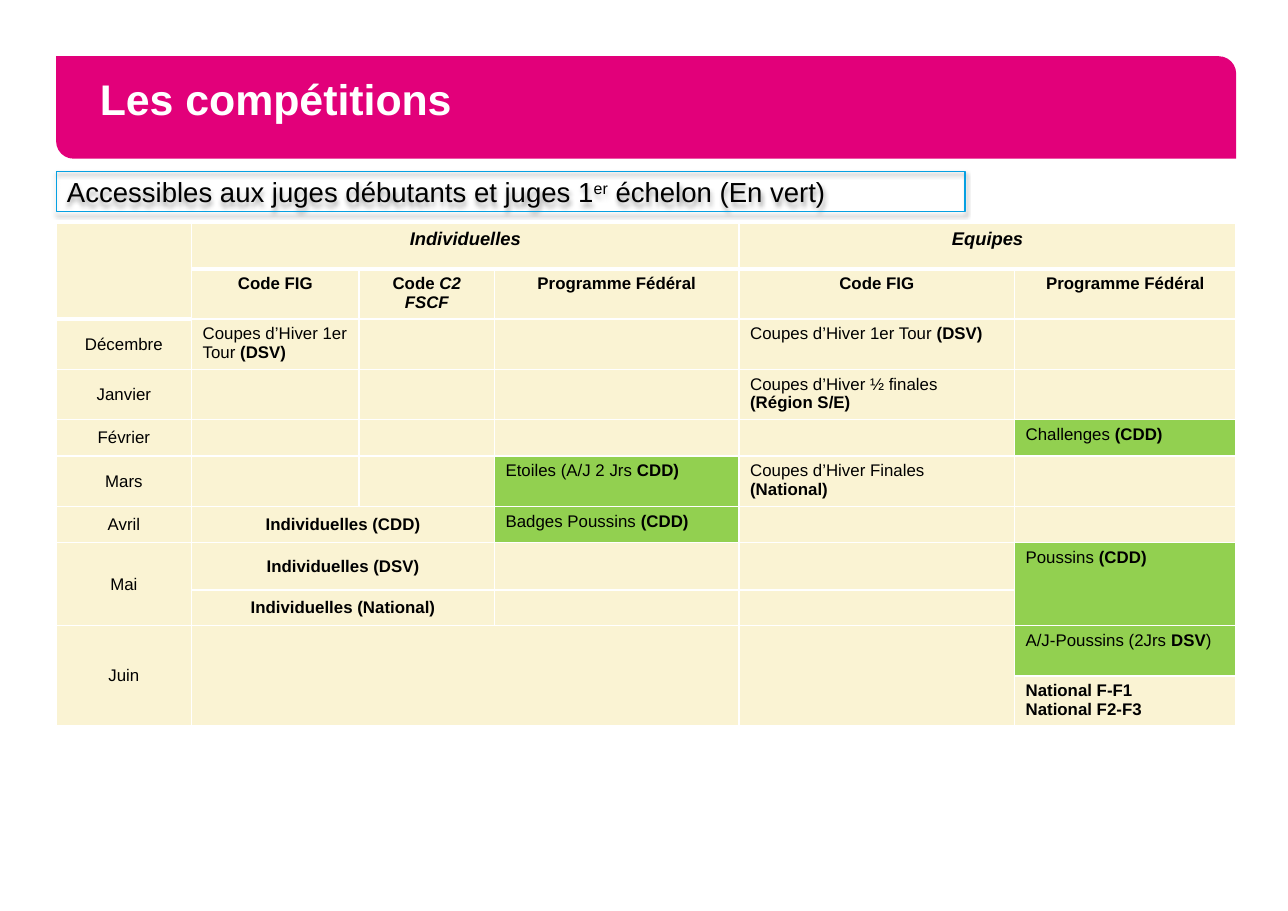
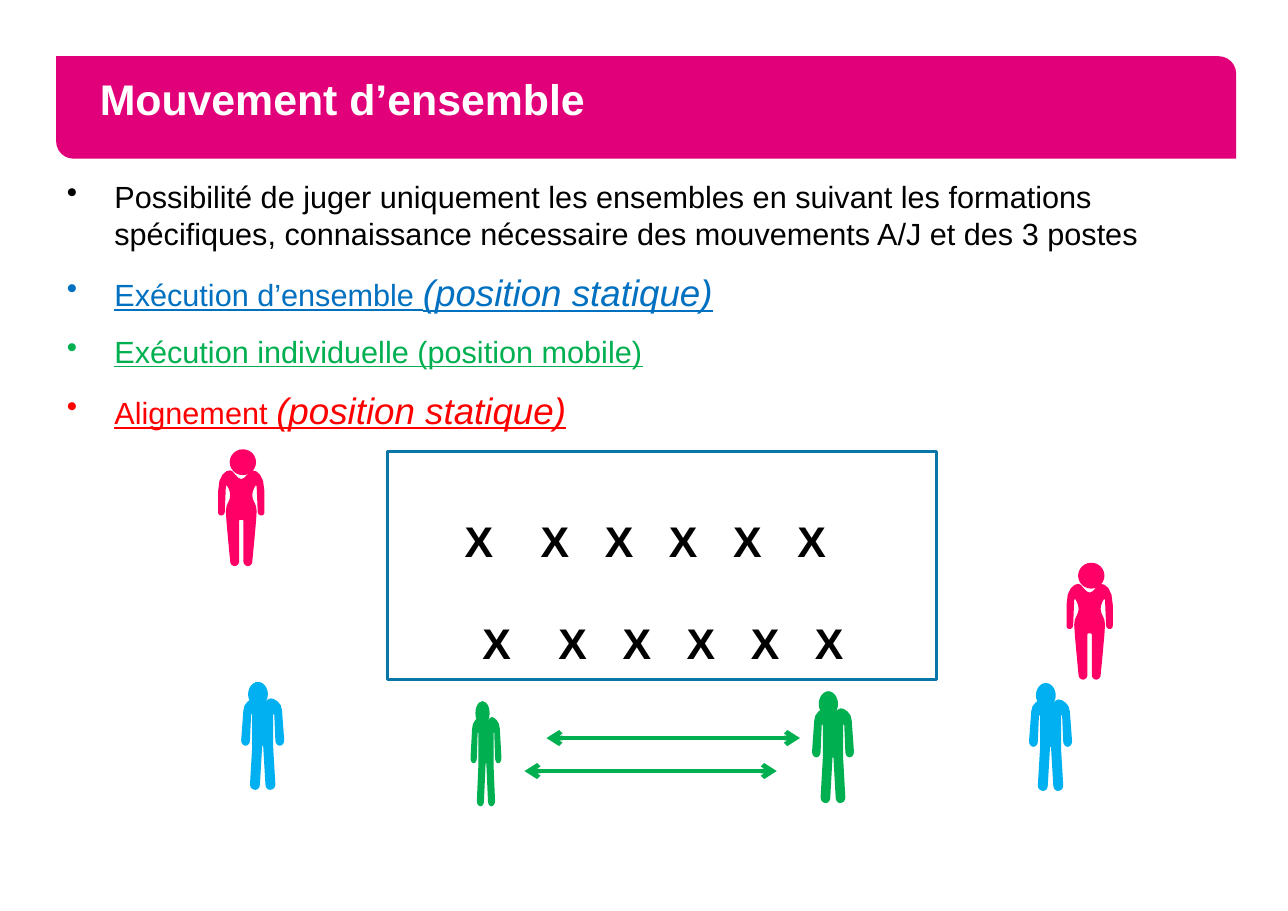
"""Build two slides on gymnastics judging: the competition calendar and the group routine."""
import dataclasses
import typing

import lxml.etree
import pptx
import pptx.dml.color
import pptx.enum.shapes
import pptx.enum.text
import pptx.oxml.ns
import pptx.util

SLIDE_WIDTH = pptx.util.Inches(11.69)
SLIDE_HEIGHT = pptx.util.Inches(8.27)
FONT = "Arial"
COLORS = {
    "band": "E2007A", "white": "FFFFFF", "black": "000000", "cream": "FAF3D3",
    "open": "92D050", "frame": "06A0E2", "floor": "0877A7", "blue": "0070C0",
    "green": "00B050", "red": "FF0000", "pink": "FF0066", "sky": "00B0F0",
}
LEFT, FULL_WIDTH = 4.36, 91.62
COLUMNS = (10.52, 13, 10.52, 18.99, 21.39, 17.2)
ROWS = (4.96, 5.52, 5.52, 5.52, 4, 5.52, 4, 5.2, 3.9, 5.52, 5.52)
CENTER = pptx.enum.text.PP_ALIGN.CENTER
MIDDLE = pptx.enum.text.MSO_ANCHOR.MIDDLE
SHAPES = pptx.enum.shapes.MSO_SHAPE
Points = tuple[tuple[float, float], ...]


class Area(typing.NamedTuple):
    """Rectangle in percent of the slide's size."""
    left: float
    top: float
    width: float
    height: float

    def emu(self) -> tuple[int, int, int, int]:
        """Return the rectangle in slide units."""
        return across(self.left), down(self.top), across(self.width), down(self.height)


@dataclasses.dataclass(frozen=True)
class Run:
    """Piece of text with its formatting."""
    text: str
    bold: bool = False
    italic: bool = False
    underline: bool = False
    size: float = 11
    color: str = "black"
    baseline: int = 0


@dataclasses.dataclass(frozen=True)
class Entry:
    """Filled or merged cell of the calendar."""
    row: int
    column: int
    lines: tuple[tuple[Run, ...], ...] = ()
    rows: int = 1
    columns: int = 1
    fill: str = "cream"
    centered: bool = False
    middle: bool = False


@dataclasses.dataclass(frozen=True)
class Outline:
    """Left half of a body on its own grid, with the head as shares of the body."""
    width: float
    height: float
    segments: tuple[Points, ...]
    head: Area


@dataclasses.dataclass(frozen=True)
class Judge:
    """Judge standing beside the floor."""
    outline: Outline
    color: str
    area: Area


WOMAN = Outline(42, 87, (
    ((21, 8),), ((17, 8), (14, 0), (11, 0)), ((7, 0), (0, 4), (0, 19)), ((0, 38),),
    ((0, 40), (1, 41), (3, 41)), ((4, 41), (6, 40), (6, 38)), ((7, 15),),
    ((7, 14), (7, 14), (8, 14)), ((8, 14), (11, 18), (11, 23)),
    ((11, 28), (7, 30), (7, 37)), ((7, 43), (11, 83), (11, 83)),
    ((11, 85), (13, 87), (15, 87)), ((17, 87), (19, 85), (19, 83)), ((19, 46),),
    ((19, 45), (20, 45), (21, 45)),
), Area(0.25, -0.22, 0.57, 0.27))
MAN = Outline(39, 83, (
    ((19.5, 4),), ((17, 4), (15, 0), (12, 0)), ((9, 0), (2, 4), (2, 11)), ((0, 38),),
    ((0, 41), (2, 43), (4, 43)), ((6, 43), (8, 41), (8, 38)), ((9, 15),),
    ((9, 14), (10, 14), (10, 15)), ((10, 44),), ((8, 78),),
    ((8, 81), (10, 83), (13, 83)), ((15, 83), (17, 81), (17, 78)), ((19, 44),),
    ((19, 43), (19, 43), (19.5, 43)),
), Area(0.16, -0.18, 0.46, 0.27))
JUDGES = (
    Judge(WOMAN, "pink", Area(16.94, 51.63, 3.59, 10.52)),
    Judge(WOMAN, "pink", Area(82.81, 64.09, 3.59, 10.52)),
    Judge(MAN, "sky", Area(79.9, 76.78, 3.34, 10.04)),
    Judge(MAN, "sky", Area(18.73, 76.66, 3.34, 10.04)),
    Judge(MAN, "green", Area(63.05, 77.75, 3.25, 10.4)),
    Judge(MAN, "green", Area(36.53, 78.72, 2.4, 9.79)),
)


def across(share: float) -> int:
    """Convert percent of the slide's width."""
    return round(SLIDE_WIDTH * share / 100)


def down(share: float) -> int:
    """Convert percent of the slide's height."""
    return round(SLIDE_HEIGHT * share / 100)


def rgb(name: str) -> pptx.dml.color.RGBColor:
    """Look up a colour."""
    return pptx.dml.color.RGBColor.from_string(COLORS[name])


def add_element(parent, tag: str, **attributes: str):
    """Append a drawing element to its parent."""
    return lxml.etree.SubElement(parent, pptx.oxml.ns.qn(tag), attributes)


def write_runs(paragraph, runs: typing.Iterable[Run]) -> None:
    """Add formatted runs to a paragraph."""
    for item in runs:
        run = paragraph.add_run()
        run.text = item.text
        font = run.font
        font.name, font.size = FONT, pptx.util.Pt(item.size)
        font.bold, font.italic, font.underline = item.bold, item.italic, item.underline
        font.color.rgb = rgb(item.color)
        if item.baseline:
            font._element.set("baseline", str(item.baseline * 1000))


def write_lines(text_frame, lines: typing.Sequence[typing.Sequence[Run]]) -> list:
    """Write one paragraph for each line and return the paragraphs."""
    text_frame.word_wrap = True
    text_frame.text = "\n".join("" for _ in lines)
    for paragraph, runs in zip(text_frame.paragraphs, lines):
        paragraph.alignment = pptx.enum.text.PP_ALIGN.LEFT
        write_runs(paragraph, runs)
    return list(text_frame.paragraphs)


def add_box(slide, kind, area: Area, fill: str = "", line: str = "", weight: float = 0):
    """Add a preset shape without a shadow."""
    shape = slide.shapes.add_shape(kind, *area.emu())
    style_shape(shape, fill, line, weight)
    shape.text_frame.vertical_anchor = MIDDLE
    return shape


def style_shape(shape, fill: str, line: str = "", weight: float = 0) -> None:
    """Set the fill and line of a shape."""
    shape.shadow.inherit = False
    if fill:
        shape.fill.solid()
        shape.fill.fore_color.rgb = rgb(fill)
    else:
        shape.fill.background()
    if line:
        shape.line.color.rgb = rgb(line)
        shape.line.width = pptx.util.Pt(weight)
    else:
        shape.line.fill.background()


def add_titled_slide(presentation, title: str):
    """Add a blank slide with the title band."""
    slide = presentation.slides.add_slide(presentation.slide_layouts[6])
    band = add_box(slide, SHAPES.ROUND_2_DIAG_RECTANGLE, Area(LEFT, 6.17, FULL_WIDTH, 11.25), "band")
    band.adjustments[0], band.adjustments[1] = 0, 0.17
    band.text_frame.margin_left = band.text_frame.margin_right = pptx.util.Inches(0.35)
    line = (Run(title, bold=True, size=28, color="white"),)
    write_lines(band.text_frame, [line])[0].line_spacing = pptx.util.Pt(22)
    return slide


def heading(row: int, column: int, *runs: Run, columns: int = 1) -> Entry:
    """Describe a centred heading."""
    return Entry(row, column, (runs,), columns=columns, centered=True)


def label(row: int, column: int, text: str, bold: bool = False, rows: int = 1, columns: int = 1) -> Entry:
    """Describe a label centred both ways."""
    return Entry(row, column, ((Run(text, bold),),), rows, columns, centered=True, middle=True)


def event(row: int, column: int, plain: str, bold: str, fill: str = "cream", rows: int = 1) -> Entry:
    """Describe an event with its level in bold."""
    return Entry(row, column, ((Run(plain), Run(bold, True)),), rows, fill=fill)


def calendar_entries() -> list[Entry]:
    """List the cells of the calendar that hold text or span others."""
    months = {2: "Décembre", 3: "Janvier", 4: "Février", 5: "Mars", 6: "Avril", 7: "Mai", 9: "Juin"}
    levels = {6: "CDD", 7: "DSV", 8: "National"}
    heads = {1: "Code FIG", 3: "Programme Fédéral", 4: "Code FIG", 5: "Programme Fédéral"}
    return [
        Entry(0, 0, rows=2),
        heading(0, 1, Run("Individuelles", True, True, size=12), columns=3),
        heading(0, 4, Run("Equipes", True, True, size=12), columns=2),
        *(heading(1, column, Run(text, True)) for column, text in heads.items()),
        heading(1, 2, Run("Code ", True), Run("C2 FSCF", True, True)),
        *(label(row, 0, text, rows=2 if row > 6 else 1) for row, text in months.items()),
        *(label(row, 1, f"Individuelles ({text})", True, columns=2) for row, text in levels.items()),
        event(2, 1, "Coupes d’Hiver 1er Tour ", "(DSV)"),
        event(2, 4, "Coupes d’Hiver 1er Tour ", "(DSV)"),
        Entry(3, 4, ((Run("Coupes d’Hiver ½ finales"),), (Run("(Région S/E)", True),))),
        event(4, 5, "Challenges ", "(CDD)", "open"),
        event(5, 3, "Etoiles (A/J 2 Jrs ", "CDD)", "open"),
        Entry(5, 4, ((Run("Coupes d’Hiver Finales"),), (Run("(National)", True),))),
        event(6, 3, "Badges Poussins ", "(CDD)", "open"),
        event(7, 5, "Poussins ", "(CDD)", "open", 2),
        Entry(9, 1, rows=2, columns=3),
        Entry(9, 4, rows=2),
        Entry(9, 5, ((Run("A/J-Poussins (2Jrs "), Run("DSV", True), Run(")")),), fill="open"),
        Entry(10, 5, ((Run("National F-F1", True),), (Run("National F2-F3", True),))),
    ]


def style_cell(cell, fill: str, thick_bottom: bool) -> None:
    """Give a cell its white borders and fill."""
    properties = cell._tc.get_or_add_tcPr()
    for side in ("L", "R", "T", "B"):
        points = 3 if side == "B" and thick_bottom else 1
        border = add_element(properties, f"a:ln{side}", w=str(pptx.util.Pt(points)))
        add_element(add_element(border, "a:solidFill"), "a:srgbClr", val=COLORS["white"])
    cell.fill.solid()
    cell.fill.fore_color.rgb = rgb(fill)


def add_calendar(slide) -> None:
    """Draw the competition calendar."""
    area = Area(LEFT, 24.55, sum(COLUMNS), sum(ROWS))
    table = slide.shapes.add_table(len(ROWS), len(COLUMNS), *area.emu()).table
    table.first_row = table.horz_banding = False
    for column, width in zip(table.columns, COLUMNS):
        column.width = across(width)
    for row, height in zip(table.rows, ROWS):
        row.height = down(height)
    entries = calendar_entries()
    fills = {(entry.row, entry.column): entry.fill for entry in entries}
    for row in range(len(ROWS)):
        for column in range(len(COLUMNS)):
            style_cell(table.cell(row, column), fills.get((row, column), "cream"),
                       row == 0 or (row, column) == (1, 0))
    for entry in entries:
        cell = table.cell(entry.row, entry.column)
        if entry.rows * entry.columns > 1:
            cell.merge(table.cell(entry.row + entry.rows - 1, entry.column + entry.columns - 1))
        if entry.middle:
            cell.vertical_anchor = MIDDLE
        for paragraph in write_lines(cell.text_frame, entry.lines) if entry.lines else ():
            paragraph.alignment = CENTER if entry.centered else None
    for cell in table.iter_cells():
        if not cell.text_frame.text:
            add_element(cell.text_frame.paragraphs[0]._p, "a:endParaRPr", sz="1100")


def add_subtitle(slide) -> None:
    """Draw the framed subtitle with its soft shadow."""
    shape = add_box(slide, SHAPES.RECTANGLE, Area(LEFT, 18.86, 70.57, 4.35), "", "frame", 0.75)
    texts = (("Accessibles aux juges débutants et juges 1", 0), ("er", 30), (" échelon (En vert)", 0))
    write_lines(shape.text_frame, [[Run(text, size=18, baseline=raised) for text, raised in texts]])
    effects = shape._element.spPr.find(pptx.oxml.ns.qn("a:effectLst"))
    shadow = add_element(effects, "a:outerShdw", blurRad="40000", dist="23000", dir="5400000", rotWithShape="0")
    add_element(add_element(shadow, "a:srgbClr", val=COLORS["black"]), "a:alpha", val="35000")


def add_bullets(slide) -> None:
    """Write the list of judging posts."""
    def post(color: str, text: str, remark: str = "") -> list[Run]:
        runs = [Run(text, underline=True, size=20, color=color)]
        return runs + ([Run(remark, False, True, True, 24, color)] if remark else [])

    box = slide.shapes.add_textbox(*Area(LEFT, 18.98, FULL_WIDTH, 30).emu())
    paragraphs = write_lines(box.text_frame, [
        [Run("Possibilité de juger uniquement les ensembles en suivant les formations spécifiques, "
             "connaissance nécessaire des mouvements A/J et des 3 postes", size=20)],
        post("blue", "Exécution d’ensemble ", "(position statique)"),
        post("green", "Exécution individuelle (position mobile)"),
        post("red", "Alignement ", "(position statique)"),
    ])
    indent = pptx.util.Inches(0.43)
    for index, paragraph in enumerate(paragraphs):
        properties = paragraph._p.get_or_add_pPr()
        properties.set("marL", str(indent))
        properties.set("indent", str(-indent))
        add_element(properties, "a:buChar", char="•")
        paragraph.space_before = pptx.util.Pt(6 if index else 0)
        paragraph.space_after = pptx.util.Pt(6)


def add_floor(slide) -> None:
    """Draw the floor with two rows of gymnasts."""
    floor = add_box(slide, SHAPES.RECTANGLE, Area(30.11, 49.58, 42.6, 25.03), "", "floor", 2)
    row = Run("\t" + "\t".join("X" * 6), bold=True, size=28)
    for paragraph, start in zip(write_lines(floor.text_frame, [[row], [row]]), (5.13, 6.5)):
        paragraph.line_spacing = 2.0
        tabs = add_element(paragraph._p.get_or_add_pPr(), "a:tabLst")
        for stop in (start, *(start + 5.9 + 4.98 * step for step in range(5))):
            add_element(tabs, "a:tab", pos=str(across(stop)), algn="l")


def body_points(outline: Outline) -> list[tuple[float, float]]:
    """Flatten the half outline and mirror it."""
    half: list[tuple[float, float]] = []
    for segment in outline.segments:
        if len(segment) == 1:
            half.append(segment[0])
            continue
        curve = (half[-1], *segment)
        for t in (0.25, 0.5, 0.75, 1):
            weights = ((1 - t) ** 3, 3 * t * (1 - t) ** 2, 3 * t * t * (1 - t), t ** 3)
            half.append(tuple(sum(w * p[axis] for w, p in zip(weights, curve)) for axis in (0, 1)))
    return half + [(outline.width - x, y) for x, y in reversed(half)]


def add_judge(slide, judge: Judge) -> None:
    """Draw a judge as a head and a body."""
    area, outline, head = judge.area, judge.outline, judge.outline.head
    add_box(slide, SHAPES.OVAL, Area(
        area.left + head.left * area.width, area.top + head.top * area.height,
        head.width * area.width, head.height * area.height), judge.color)
    points = [(across(area.left + x / outline.width * area.width),
               down(area.top + y / outline.height * area.height)) for x, y in body_points(outline)]
    builder = slide.shapes.build_freeform(*points[0])
    builder.add_line_segments(points[1:])
    style_shape(builder.convert_to_shape(), judge.color)


def add_walk(slide, left: float, right: float, top: float) -> None:
    """Draw a two-way arrow along the floor."""
    ends = across(left), down(top), across(right), down(top)
    walk = slide.shapes.add_connector(pptx.enum.shapes.MSO_CONNECTOR.STRAIGHT, *ends)
    walk.line.color.rgb, walk.line.width = rgb("green"), pptx.util.Pt(3)
    for tag in ("a:headEnd", "a:tailEnd"):
        add_element(walk.line._get_or_add_ln(), tag, type="arrow")
    add_element(walk._element.spPr, "a:effectLst")


def main() -> None:
    """Build and save the presentation."""
    presentation = pptx.Presentation()
    presentation.slide_width, presentation.slide_height = SLIDE_WIDTH, SLIDE_HEIGHT
    competitions = add_titled_slide(presentation, "Les compétitions")
    add_calendar(competitions)
    add_subtitle(competitions)
    routine = add_titled_slide(presentation, "Mouvement d’ensemble")
    add_bullets(routine)
    add_floor(routine)
    for judge in JUDGES:
        add_judge(routine, judge)
    add_walk(routine, 42.43, 62.11, 81.02)
    add_walk(routine, 40.72, 60.31, 84.64)
    presentation.save("out.pptx")


if __name__ == "__main__":
    main()
